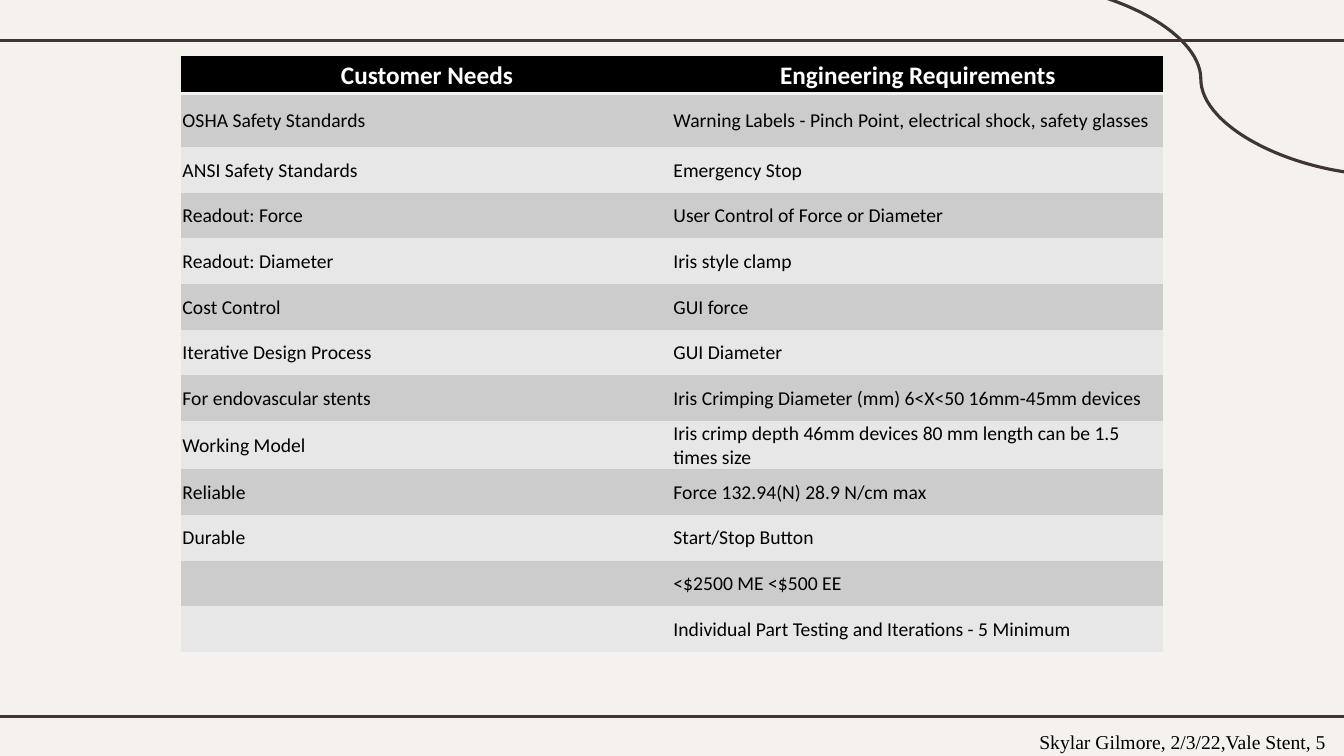
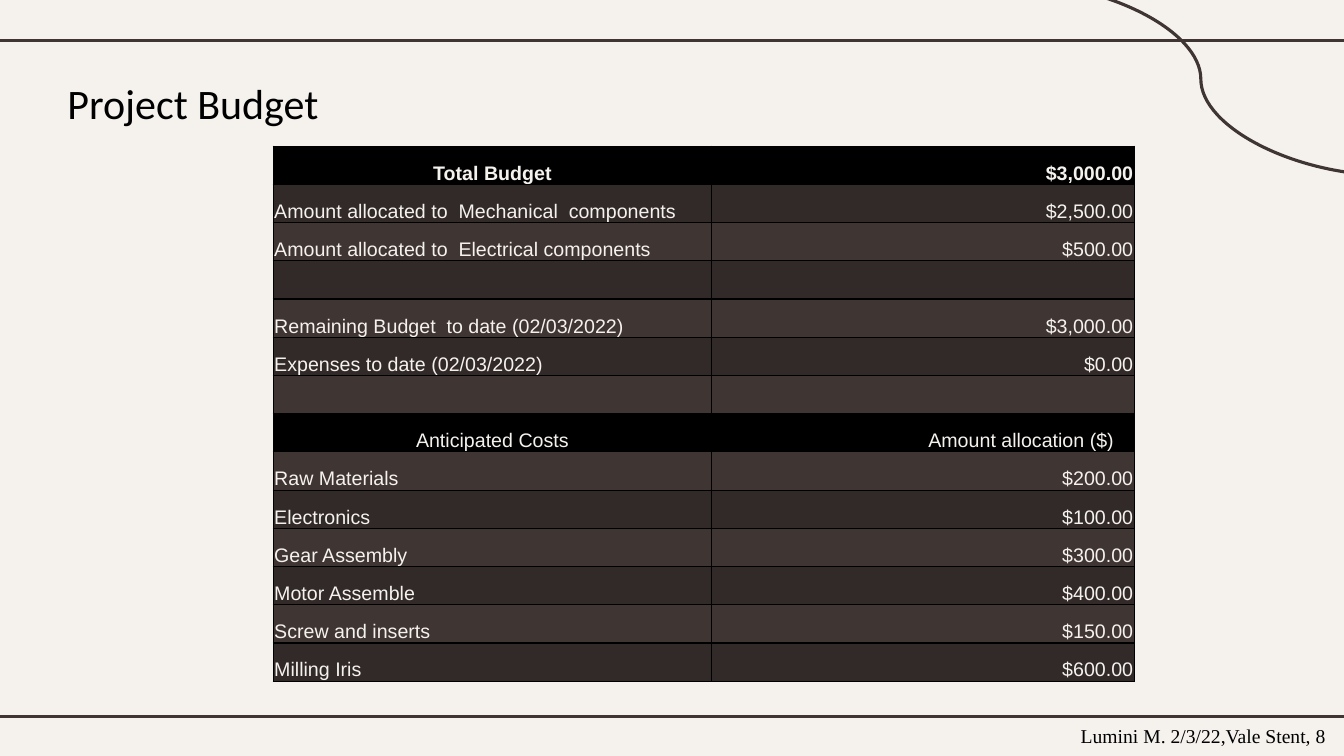
from lxml import etree
from pptx import Presentation
from pptx.dml.color import RGBColor
from pptx.enum.shapes import MSO_CONNECTOR
from pptx.enum.text import MSO_ANCHOR, PP_ALIGN
from pptx.oxml.ns import qn
from pptx.util import Inches, Pt

LINE, CURVE = MSO_CONNECTOR.STRAIGHT, MSO_CONNECTOR.CURVE
LEFT, MID, RIGHT = PP_ALIGN.LEFT, PP_ALIGN.CENTER, PP_ALIGN.RIGHT
CENTER, BOTTOM = MSO_ANCHOR.MIDDLE, MSO_ANCHOR.BOTTOM
PLAIN = "{2D5ABB26-0587-4C30-8999-92F81FD0307C}"


class Theme:
    paper, ink, black, white = "F5F2EE", "3F3533", "000000", "FFFFFF"
    dusk, gray, pale = "322A29", "CCCCCC", "E7E7E7"
    sans, grid, serif = "Calibri", "Arial", "Times New Roman"
    title, head, body = 30, 18, 14
    rule = 2.25


FRAME = [
    (LINE, -0.11, 0.4, 13.44, 0.4),
    (LINE, -0.11, 7.11, 13.44, 7.11),
    (CURVE, 10.04, -0.17, 13.78, 1.74),
]

NEEDS = [
    ("Customer Needs", "Engineering Requirements"),
    ("OSHA Safety Standards",
     "Warning Labels - Pinch Point, electrical shock, safety glasses"),
    ("ANSI Safety Standards", "Emergency Stop"),
    ("Readout: Force", "User Control of Force or Diameter"),
    ("Readout: Diameter", "Iris style clamp"),
    ("Cost Control", "GUI force"),
    ("Iterative Design Process", "GUI Diameter"),
    ("For endovascular stents",
     "Iris Crimping Diameter (mm) 6<X<50 16mm-45mm devices"),
    ("Working Model",
     "Iris crimp depth 46mm devices 80 mm length can be 1.5 times size"),
    ("Reliable", "Force 132.94(N) 28.9 N/cm max"),
    ("Durable", "Start/Stop Button"),
    ("", "<$2500 ME <$500 EE"),
    ("", "Individual Part Testing and Iterations - 5 Minimum"),
]

BUDGET = [
    ("Total Budget", "$3,000.00"),
    ("Amount allocated to  Mechanical  components", "$2,500.00"),
    ("Amount allocated to  Electrical components", "$500.00"),
    ("", ""),
    ("Remaining Budget  to date (02/03/2022)", "$3,000.00"),
    ("Expenses to date (02/03/2022)", "$0.00"),
    ("", ""),
    ("Anticipated Costs", "Amount allocation ($)"),
    ("Raw Materials", "$200.00"),
    ("Electronics", "$100.00"),
    ("Gear Assembly", "$300.00"),
    ("Motor Assemble", "$400.00"),
    ("Screw and inserts", "$150.00"),
    ("Milling Iris", "$600.00"),
]

SLIDES = [
    dict(
        foot=("Skylar Gilmore, 2/3/22,Vale Stent, 5", 10.21, 7.19),
        rows=NEEDS, at=(1.8, 0.56), cols=(4.87, 4.87), high=5.91,
        fixed={0: 0.37, 1: 0.53, 8: 0.48}, heads=[0], anchor=CENTER,
        font=Theme.sans, size=Theme.head,
        bands=(Theme.pale, Theme.gray), tint=Theme.black, bright=Theme.white,
        align=(LEFT, LEFT), top=(MID, MID),
        edge=("B", Theme.paper, 2), inset={},
    ),
    dict(
        title="Project Budget",
        foot=("Lumini M. 2/3/22,Vale Stent, 8", 10.62, 7.13),
        rows=BUDGET, at=(2.71, 1.45), cols=(4.35, 4.19), high=5.31,
        fixed={}, heads=[0, 7], anchor=BOTTOM,
        font=Theme.grid, size=Theme.body,
        bands=(Theme.ink, Theme.dusk), tint=Theme.paper, bright=Theme.paper,
        align=(LEFT, RIGHT), top=(MID, RIGHT),
        edge=("LRTB", Theme.black, 1), inset={(7, 1): 0.2},
    ),
]


def rgb(code):
    return RGBColor.from_string(code)


def style(frame, font, size, tint, bold=False, align=LEFT):
    for para in frame.paragraphs:
        para.alignment = align
        for run in para.runs:
            run.font.name, run.font.size = font, Pt(size)
            run.font.bold, run.font.color.rgb = bold, rgb(tint)


def label(slide, text, box, font, size):
    frame = slide.shapes.add_textbox(*map(Inches, box)).text_frame
    frame.word_wrap = True
    frame.text = text
    style(frame, font, size, Theme.black)


def frame_lines(slide):
    for kind, *ends in FRAME:
        line = slide.shapes.add_connector(kind, *map(Inches, ends))
        line.line.color.rgb = rgb(Theme.ink)
        line.line.width = Pt(Theme.rule)
        etree.SubElement(line.element.spPr, qn("a:effectLst"))


def border(cell, sides, tint, width):
    props = cell._tc.get_or_add_tcPr()
    for side in sides:
        line = etree.SubElement(props, qn("a:ln" + side), w=str(Pt(width)))
        fill = etree.SubElement(line, qn("a:solidFill"))
        etree.SubElement(fill, qn("a:srgbClr"), val=tint)


def add_grid(slide, data):
    rows, cols, fixed = data["rows"], data["cols"], data["fixed"]
    box = (*data["at"], sum(cols), data["high"])
    shape = slide.shapes.add_table(len(rows), len(cols), *map(Inches, box))
    shape.element.find(".//" + qn("a:tableStyleId")).text = PLAIN
    table = shape.table
    table.first_row = table.horz_banding = False
    for col, width in zip(table.columns, cols):
        col.width = Inches(width)
    even = (data["high"] - sum(fixed.values())) / (len(rows) - len(fixed))
    sides, tint, width = data["edge"]
    for r, row in enumerate(rows):
        table.rows[r].height = Inches(fixed.get(r, even))
        head = r in data["heads"]
        for c, text in enumerate(row):
            cell = table.cell(r, c)
            cell.margin_left = cell.margin_top = Inches(0.01)
            cell.margin_right = Inches(data["inset"].get((r, c), 0.01))
            cell.margin_bottom = 0
            cell.vertical_anchor = data["anchor"]
            if head or len(sides) > 1:
                border(cell, sides, tint, width)
            cell.fill.solid()
            cell.fill.fore_color.rgb = rgb(
                Theme.black if head else data["bands"][r % 2])
            cell.text_frame.text = text
            style(cell.text_frame, data["font"],
                  data["size"] if head else Theme.body,
                  data["bright"] if head else data["tint"],
                  r == 0, data["top" if head else "align"][c])


def main():
    deck = Presentation()
    deck.slide_width, deck.slide_height = Inches(13.33), Inches(7.5)
    back = deck.slide_master.background.fill
    back.solid()
    back.fore_color.rgb = rgb(Theme.paper)
    for data in SLIDES:
        slide = deck.slides.add_slide(deck.slide_layouts[6])
        frame_lines(slide)
        if "title" in data:
            label(slide, data["title"], (0.57, 0.72, 5.28, 0.84),
                  Theme.sans, Theme.title)
        text, left, top = data["foot"]
        label(slide, text, (left, top, 3.13, 0.34), Theme.serif, Theme.body)
        add_grid(slide, data)
    deck.save("out.pptx")


if __name__ == "__main__":
    main()
